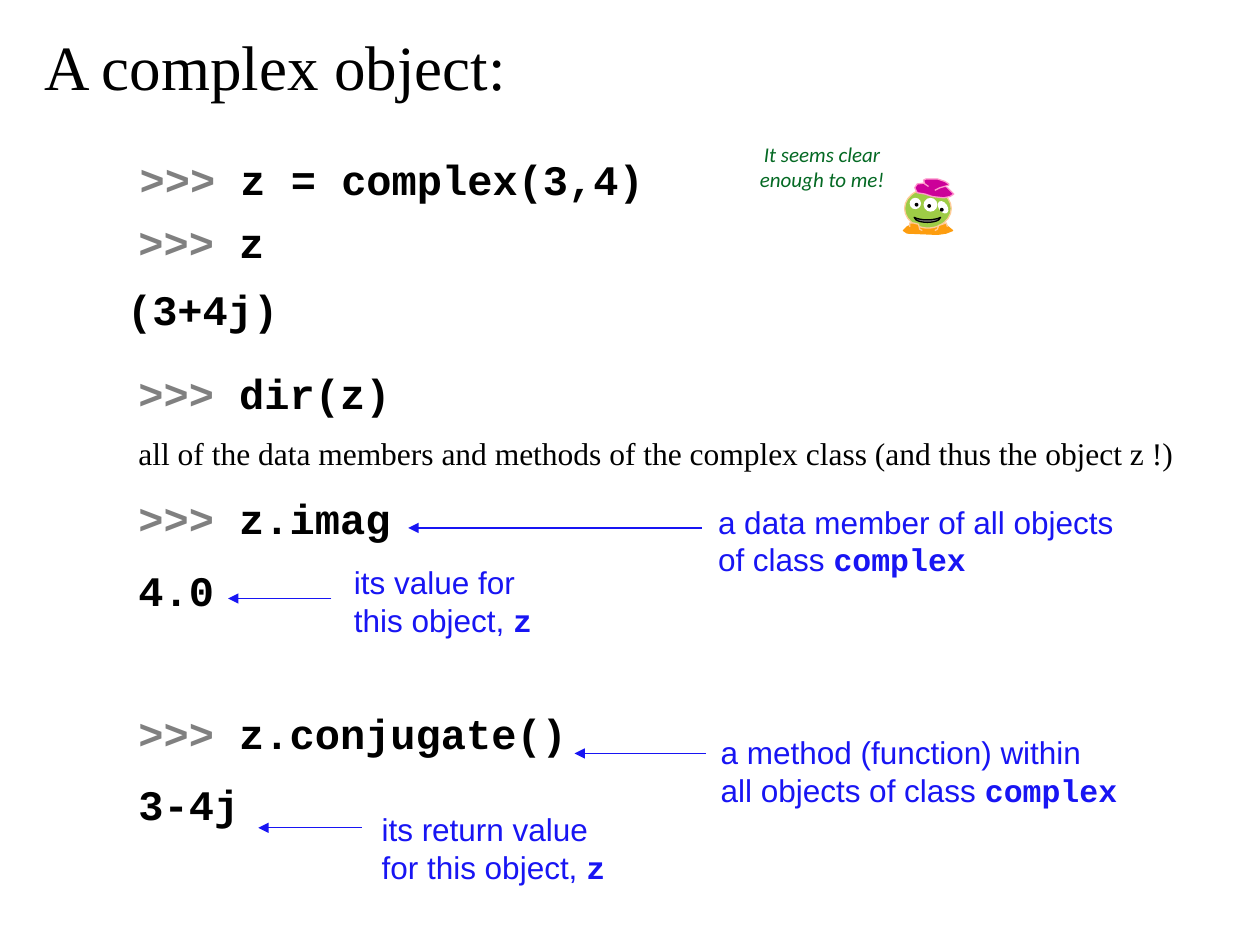
import pptx
import pptx.util
import pptx.dml.color
import pptx.enum.shapes
import pptx.enum.text
import pptx.oxml

Inches, Pt = pptx.util.Inches, pptx.util.Pt
KIND = pptx.enum.shapes.MSO_SHAPE
ALIGN = pptx.enum.text.PP_ALIGN
NS = 'xmlns:a="http://schemas.openxmlformats.org/drawingml/2006/main"'

THEME = {
    "title": ("Times New Roman", 36, "000000", False, False),
    "prompt": ("Courier New", 24, "808080", True, False),
    "code": ("Courier New", 24, "000000", True, False),
    "prose": ("Times New Roman", 18, "000000", False, False),
    "note": ("Arial", 18, "1815F3", False, False),
    "term": ("Courier New", 18, "1815F3", True, False),
    "quip": ("Calibri", 12, "046923", False, True),
    "arrow": "1815F3", "paper": "FFFFFF", "ink": "000000", "mouth": "808080",
    "skin": "9ECC46", "rim": "FFCC99", "foot": "FD9D0F",
    "hat": "CC0099", "trim": "FF99CC", "line": 0.75,
}

TITLE = "A complex object:"
QUIP = "It seems clear enough to me!"


def ask(code):
    return [(">>>", "prompt"), (" " + code, "code")]


def tell(code):
    return [(code, "code")]


CODE = [
    ((1.01, 1.17, 5.92, 0.5), [(0, ask("z = complex(3,4)"))]),
    ((1, 1.67, 5.92, 0.5), [(0, ask("z"))]),
    ((0.91, 2.2, 1.41, 0.5), [(0, tell("(3+4j)"))]),
    ((1, 2.87, 8.58, 3.95), [
        (0, ask("dir(z)")),
        (9, [("all of the data members and methods of the complex class "
              "(and thus the object z !)", "prose")]),
        (12, ask("z.imag")),
        (12, tell("4.0")),
        (52.8, ask("z.conjugate()")),
        (12, tell("3-4j")),
    ]),
]
NOTES = [
    ((5.6, 3.94, 3.35, 0.7), "a data member of all objects of class ", "complex"),
    ((2.71, 4.42, 1.82, 0.7), "its value for this object, ", "z"),
    ((5.62, 5.77, 3.35, 0.7), "a method (function) within all objects of class ", "complex"),
    ((2.93, 6.38, 2.02, 0.7), "its return value for this object, ", "z"),
]
ARROWS = [(5.57, 3.24, 4.19), (2.63, 1.81, 4.75), (5.6, 4.56, 5.98), (2.87, 2.05, 6.57)]

BASE = [(7.36, 1.75), (7.42, 1.75), (7.5, 1.78), (7.56, 1.83), (7.51, 1.85), (7.44, 1.86),
        (7.2, 1.85), (7.17, 1.83), (7.2, 1.8), (7.27, 1.77), (7.31, 1.75)]
BRIM = [(7.36, 1.45), (7.28, 1.46), (7.26, 1.49), (7.28, 1.53), (7.34, 1.54), (7.4, 1.56),
        (7.49, 1.57), (7.54, 1.56), (7.57, 1.54), (7.55, 1.52), (7.52, 1.49)]
CROWN = [(7.37, 1.48), (7.34, 1.46), (7.33, 1.43), (7.35, 1.42), (7.44, 1.42), (7.5, 1.44),
         (7.53, 1.46), (7.53, 1.47), (7.46, 1.49), (7.42, 1.51)]
FEET = [[(7.22, 1.8), (7.22, 1.77), (7.25, 1.77), (7.29, 1.78), (7.3, 1.82), (7.32, 1.83)],
        [(7.52, 1.8), (7.51, 1.77), (7.48, 1.78), (7.45, 1.79), (7.44, 1.82), (7.42, 1.83)]]
EYES = [((7.22, 1.57, 0.09, 0.09), 327.2), ((7.33, 1.57, 0.11, 0.11), 0),
        ((7.45, 1.59, 0.07, 0.11), 325.5)]
DOTS = [(7.26, 1.61), (7.36, 1.62), (7.46, 1.65)]


def tint(name):
    return pptx.dml.color.RGBColor.from_string(name)


def style(font, key):
    font.name, size, shade, font.bold, font.italic = THEME[key]
    font.size = Pt(size)
    font.color.rgb = tint(shade)


def write(shape, paras, align=ALIGN.LEFT):
    frame = shape.text_frame
    frame.word_wrap = True
    frame.auto_size = pptx.enum.text.MSO_AUTO_SIZE.NONE
    frame.vertical_anchor = pptx.enum.text.MSO_ANCHOR.TOP
    for i, (gap, runs) in enumerate(paras):
        para = frame.add_paragraph() if i else frame.paragraphs[0]
        para.alignment = align
        para.space_before = Pt(gap)
        same = len(runs) == 1
        for text, key in runs:
            run = para.add_run()
            run.text = text
            style(para.font if same else run.font, key)


def paint(shape, fill, edge=None):
    shape.shadow.inherit = False
    shape.fill.solid()
    shape.fill.fore_color.rgb = tint(THEME[fill])
    if edge:
        shape.line.color.rgb = tint(THEME[edge])
        shape.line.width = Pt(THEME["line"])
    else:
        shape.line.fill.background()


def place(shapes, kind, box, fill, edge=None, turn=0):
    shape = shapes.add_shape(kind, *map(Inches, box))
    shape.rotation = turn
    paint(shape, fill, edge)
    return shape


def trace(shapes, points, fill, edge, close=False):
    spots = [(Inches(x), Inches(y)) for x, y in points]
    pen = shapes.build_freeform(*spots[0])
    pen.add_line_segments(spots[1:], close=close)
    paint(pen.convert_to_shape(), fill, edge)


def point(shapes, start, end, y):
    line = shapes.add_connector(pptx.enum.shapes.MSO_CONNECTOR.STRAIGHT,
                                *map(Inches, (start, y, end, y)))
    line.line.color.rgb = tint(THEME["arrow"])
    line.line.width = Pt(THEME["line"])
    line.line._get_or_add_ln().append(
        pptx.oxml.parse_xml(f'<a:tailEnd {NS} type="triangle"/>'))
    line._element.spPr.append(pptx.oxml.parse_xml(f"<a:effectLst {NS}/>"))


def draw_alien(shapes):
    trace(shapes, BASE, "foot", "foot", True)
    place(shapes, KIND.OVAL, (7.18, 1.5, 0.37, 0.31), "skin", "rim")
    for box, turn in EYES:
        place(shapes, KIND.OVAL, box, "paper", turn=turn)
    for x, y in DOTS:
        place(shapes, KIND.OVAL, (x, y, 0.03, 0.03), "ink")
    place(shapes, KIND.MOON, (7.34, 1.64, 0.04, 0.21), "mouth", "ink", 270)
    for points in (BRIM, CROWN):
        trace(shapes, points, "hat", "trim")
    for points in FEET:
        trace(shapes, points, "foot", "rim")


def main():
    deck = pptx.Presentation()
    deck.slide_width, deck.slide_height = Inches(10), Inches(7.5)
    shapes = deck.slides.add_slide(deck.slide_layouts[5]).shapes
    title = shapes.title
    title.left, title.top, title.width, title.height = map(Inches, (0.25, 0.17, 6.22, 0.71))
    write(title, [(0, [(TITLE, "title")])])
    for box, paras in CODE:
        write(shapes.add_textbox(*map(Inches, box)), paras)
    for box, text, term in NOTES:
        write(shapes.add_textbox(*map(Inches, box)), [(0, [(text, "note"), (term, "term")])])
    for start, end, y in ARROWS:
        point(shapes, start, end, y)
    quip = place(shapes, KIND.RECTANGLE, (5.88, 1.07, 1.29, 0.51), "paper")
    write(quip, [(0, [(QUIP, "quip")])], ALIGN.CENTER)
    draw_alien(shapes.add_group_shape().shapes)
    deck.save("out.pptx")


if __name__ == "__main__":
    main()
